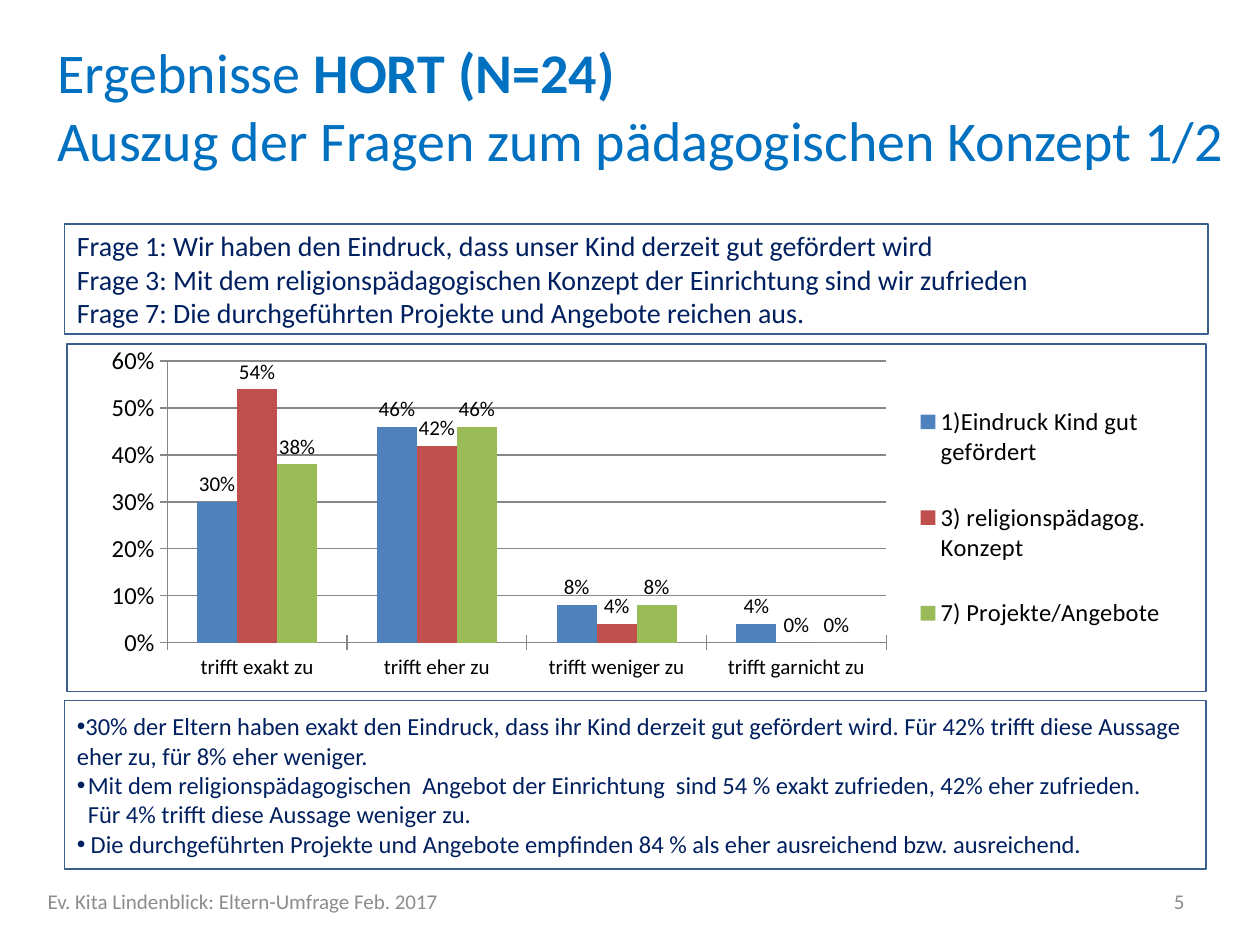
from dataclasses import dataclass

from lxml import etree
from pptx import Presentation
from pptx.chart.data import CategoryChartData
from pptx.dml.color import RGBColor
from pptx.enum.chart import XL_CHART_TYPE, XL_LABEL_POSITION, XL_LEGEND_POSITION, XL_TICK_MARK
from pptx.enum.shapes import MSO_SHAPE
from pptx.enum.text import MSO_ANCHOR, PP_ALIGN
from pptx.oxml import parse_xml
from pptx.oxml.ns import nsdecls, qn
from pptx.util import Cm, Pt

COLUMNS = XL_CHART_TYPE.COLUMN_CLUSTERED
OUTSIDE = XL_LABEL_POSITION.OUTSIDE_END
RIGHT_SIDE = XL_LEGEND_POSITION.RIGHT
CROSS = XL_TICK_MARK.CROSS
RECT = MSO_SHAPE.RECTANGLE
MIDDLE = MSO_ANCHOR.MIDDLE
LEFT, RIGHT = PP_ALIGN.LEFT, PP_ALIGN.RIGHT

FONT = "Calibri"
PERCENT = "0%"
COLORS = {
    "title": "0070C0", "body": "002060", "footer": "8C8C8C", "frame": "3A5F8C",
    "axis": "868686", "text": "000000",
}


@dataclass
class Box:
    left: float
    top: float
    width: float
    height: float

    def place(self) -> tuple:
        return Cm(self.left), Cm(self.top), Cm(self.width), Cm(self.height)


@dataclass
class Label:
    box: Box
    lines: list[str]
    size: int
    color: str
    align: PP_ALIGN = LEFT
    framed: bool = False


@dataclass
class Series:
    name: str
    values: tuple
    color: str


FOOTER = Label(Box(0.71, 17.65, 16.03, 1.02),
               ["Ev. Kita Lindenblick: Eltern-Umfrage Feb. 2017"], 12, "footer")
NUMBER = Label(Box(18.21, 17.65, 5.92, 1.02), ["5"], 12, "footer", RIGHT)
TITLE = Label(Box(0.91, 0.71, 24.49, 2.82),
              ["Ergebnisse ", "Auszug der Fragen zum pädagogischen Konzept 1/2"], 32, "title")
FINDINGS = Label(Box(1.3, 14.12, 23.01, 3.4), [
    "30% der Eltern haben exakt den Eindruck, dass ihr Kind derzeit gut gefördert wird. "
    "Für 42% trifft diese Aussage eher zu, für 8% eher weniger.",
    "Mit dem religionspädagogischen  Angebot der Einrichtung  sind 54 % exakt zufrieden, "
    "42% eher zufrieden. \vFür 4% trifft diese Aussage weniger zu.",
    "Die durchgeführten Projekte und Angebote empfinden 84 % als eher ausreichend "
    "bzw. ausreichend.",
], 14, "body", framed=True)
HANGS = (0, 0.22, 0.28)
QUESTIONS = Label(Box(1.3, 4.52, 23.06, 2.21), [
    "Frage 1: Wir haben den Eindruck, dass unser Kind derzeit gut gefördert wird",
    "Frage 3: Mit dem religionspädagogischen Konzept der Einrichtung sind wir zufrieden",
    "Frage 7: Die durchgeführten Projekte und Angebote reichen aus.",
], 16, "body", framed=True)
PANEL = Box(1.35, 6.93, 22.96, 7.01)
CHART = Box(1.3, 6.93, 23.01, 7.01)

ANSWERS = ["trifft exakt zu", "trifft eher zu", "trifft weniger zu", "trifft garnicht zu"]
SERIES = [
    Series("1)Eindruck Kind gut gefördert", (0.3, 0.46, 0.08, 0.04), "4F81BD"),
    Series("3) religionspädagog. Konzept", (0.54, 0.42, 0.04, 0), "C0504D"),
    Series("7) Projekte/Angebote", (0.38, 0.46, 0.08, 0), "9BBB59"),
]


def paint(font, size: int, color: str) -> None:
    font.name, font.size = FONT, Pt(size)
    font.color.rgb = RGBColor.from_string(COLORS[color])


def add_frame(slide, box: Box):
    shape = slide.shapes.add_shape(RECT, *box.place())
    shape.shadow.inherit = False
    shape.fill.background()
    shape.line.color.rgb = RGBColor.from_string(COLORS["frame"])
    shape.line.width = Pt(1)
    return shape


def add_label(slide, label: Label):
    if label.framed:
        shape = add_frame(slide, label.box)
    else:
        shape = slide.shapes.add_textbox(*label.box.place())
    frame = shape.text_frame
    frame.text = "\n".join(label.lines)
    frame.word_wrap = True
    frame.vertical_anchor = MIDDLE
    for para in frame.paragraphs:
        para.alignment = label.align
        for run in para.runs:
            paint(run.font, label.size, label.color)
    return frame


def add_bullet(para, hang: float) -> None:
    props = para._p.get_or_add_pPr()
    props.set("marL", str(Cm(hang)))
    props.set("indent", str(-Cm(hang)))
    etree.SubElement(props, qn("a:buFont")).set("typeface", "Arial")
    etree.SubElement(props, qn("a:buChar")).set("char", "•")


def make_layout(left: float, top: float, width: float, height: float, inner: bool = False):
    """Return a manual chart layout in fractions of the chart's size."""
    target = '<c:layoutTarget val="inner"/>' if inner else ""
    return parse_xml(
        f'<c:layout {nsdecls("c")}><c:manualLayout>{target}'
        '<c:xMode val="edge"/><c:yMode val="edge"/>'
        f'<c:x val="{left}"/><c:y val="{top}"/><c:w val="{width}"/><c:h val="{height}"/>'
        '</c:manualLayout></c:layout>')


def set_layout(parent, layout, before: str) -> None:
    for old in parent.findall(qn("c:layout")):
        parent.remove(old)
    parent.find(qn(before)).addprevious(layout)


def style_axis(axis, size: int) -> None:
    axis.major_tick_mark = CROSS
    paint(axis.tick_labels.font, size, "text")
    axis.format.line.color.rgb = RGBColor.from_string(COLORS["axis"])


def add_chart(slide) -> None:
    data = CategoryChartData(number_format=PERCENT)
    data.categories = ANSWERS
    for item in SERIES:
        data.add_series(item.name, item.values)
    chart = slide.shapes.add_chart(COLUMNS, *CHART.place(), data).chart
    paint(chart.font, 18, "text")
    chart.has_title = False

    style_axis(chart.category_axis, 12)
    scale = chart.value_axis
    style_axis(scale, 14)
    scale.minimum_scale, scale.maximum_scale, scale.major_unit = 0, 0.6, 0.1
    scale.tick_labels.number_format = PERCENT
    scale.tick_labels.number_format_is_linked = False
    scale.major_gridlines.format.line.color.rgb = RGBColor.from_string(COLORS["axis"])

    plot = chart.plots[0]
    plot.gap_width, plot.overlap = 150, 0
    plot.vary_by_categories = False
    for bars, item in zip(plot.series, SERIES):
        bars.format.fill.solid()
        bars.format.fill.fore_color.rgb = RGBColor.from_string(item.color)
        marks = bars.data_labels
        marks.show_value = True
        marks.number_format, marks.number_format_is_linked = PERCENT, False
        marks.position = OUTSIDE
        paint(marks.font, 12, "text")

    chart.has_legend = True
    legend = chart.legend
    legend.position, legend.include_in_layout = RIGHT_SIDE, False
    paint(legend.font, 14, "text")
    area = chart._chartSpace.chart.plotArea
    set_layout(area, make_layout(0.09, 0.05, 0.63, 0.81, True), "c:barChart")
    set_layout(legend._element, make_layout(0.73, 0.08, 0.25, 0.84), "c:overlay")


def main() -> None:
    deck = Presentation()
    deck.slide_width, deck.slide_height = Cm(25.4), Cm(19.05)
    slide = deck.slides.add_slide(deck.slide_layouts[6])

    add_label(slide, FOOTER)
    add_label(slide, NUMBER)
    title = add_label(slide, TITLE)
    group = title.paragraphs[0].add_run()
    group.text = "HORT (N=24)"
    paint(group.font, TITLE.size, TITLE.color)
    group.font.bold = True
    findings = add_label(slide, FINDINGS)
    for para, hang in zip(findings.paragraphs, HANGS):
        add_bullet(para, hang)
    add_label(slide, QUESTIONS)
    add_frame(slide, PANEL)
    add_chart(slide)
    deck.save("out.pptx")


if __name__ == "__main__":
    main()
